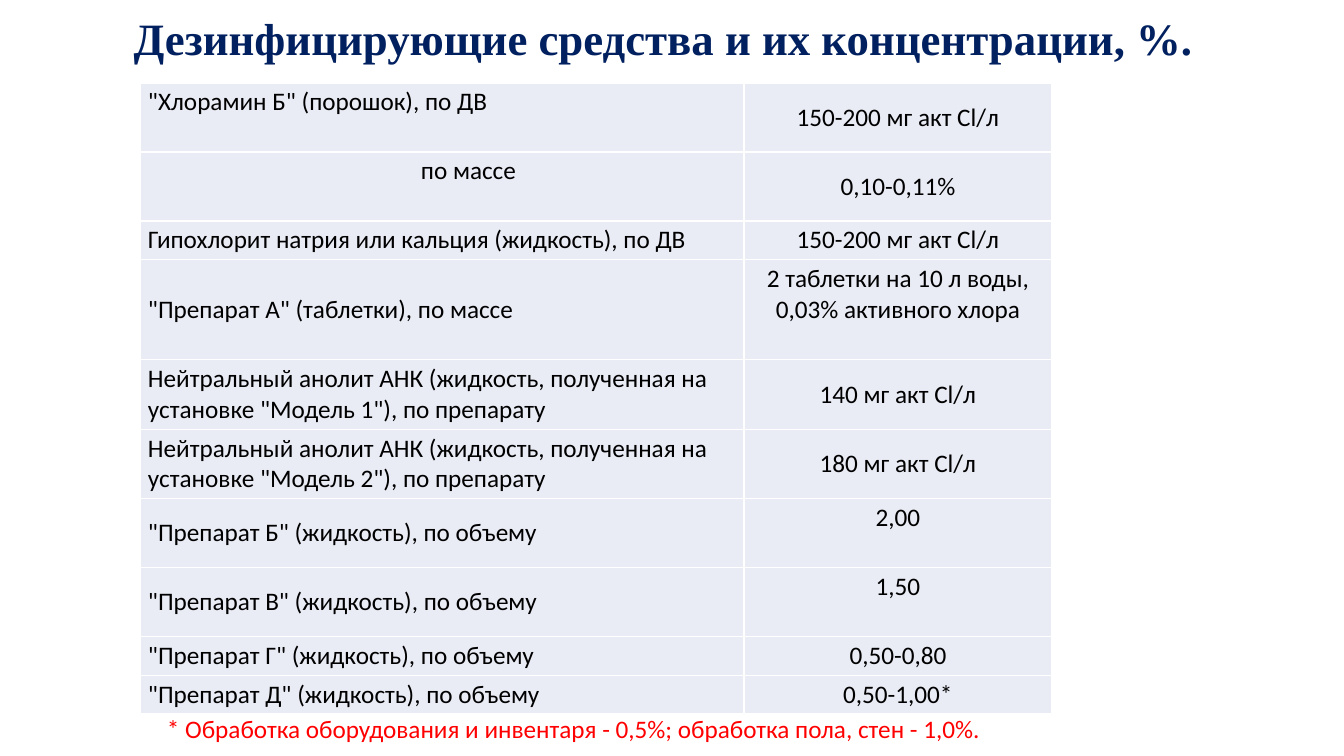
"""Build a slide with a table of disinfectants and their concentrations."""
from pptx import Presentation
from pptx.dml.color import RGBColor
from pptx.enum.text import MSO_ANCHOR, PP_ALIGN
from pptx.util import Emu, Pt

TOP, MIDDLE = MSO_ANCHOR.TOP, MSO_ANCHOR.MIDDLE
LEFT, CENTER = PP_ALIGN.LEFT, PP_ALIGN.CENTER
TITLE_ONLY = 5
COLORS = {"title": "002060", "text": "000000", "cell": "E9EBF5", "note": "FF0000"}

TITLE = "Дезинфицирующие средства и их концентрации, %."
NOTE = "* Обработка оборудования и инвентаря - 0,5%; обработка пола, стен - 1,0%."
# name, name anchor, name indent, value, value anchor, lines of height
ROWS = [
    ('"Хлорамин Б" (порошок), по ДВ', TOP, 0, "150-200 мг акт Cl/л", MIDDLE, 2),
    ("по массе", TOP, 273, "0,10-0,11%", MIDDLE, 2),
    ("Гипохлорит натрия или кальция (жидкость), по ДВ", MIDDLE, 0,
     "150-200 мг акт Cl/л", MIDDLE, 1),
    ('"Препарат А" (таблетки), по массе', MIDDLE, 0,
     "2 таблетки на 10 л воды, 0,03% активного хлора", TOP, 3),
    ('Нейтральный анолит АНК (жидкость, полученная на установке "Модель 1"), по препарату',
     MIDDLE, 0, "140 мг акт Cl/л", MIDDLE, 2),
    ('Нейтральный анолит АНК (жидкость, полученная на установке "Модель 2"), по препарату',
     MIDDLE, 0, "180 мг акт Cl/л", MIDDLE, 2),
    ('"Препарат Б" (жидкость), по объему', MIDDLE, 0, "2,00", TOP, 2),
    ('"Препарат В" (жидкость), по объему', MIDDLE, 0, "1,50", TOP, 2),
    ('"Препарат Г" (жидкость), по объему', MIDDLE, 0, "0,50-0,80", MIDDLE, 1),
    ('"Препарат Д" (жидкость), по объему', TOP, 0, "0,50-1,00*", TOP, 1),
]
COLUMN_WIDTHS = [604, 308]
LINE_HEIGHT, ROW_PADDING = 31, 7
CELL_MARGIN_X, CELL_MARGIN_Y = 8, 4


def px(length):
    return Emu(round(length * 914400 / 100.8))


def write(paragraph, text, font_name, size, color, alignment):
    paragraph.text = text
    paragraph.alignment = alignment
    paragraph.font.name = font_name
    paragraph.font.size = Pt(size)
    paragraph.font.color.rgb = RGBColor.from_string(COLORS[color])


def fill_cell(cell, text, anchor, indent, alignment):
    cell.fill.solid()
    cell.fill.fore_color.rgb = RGBColor.from_string(COLORS["cell"])
    cell.vertical_anchor = anchor
    cell.margin_left = px(CELL_MARGIN_X + indent)
    cell.margin_right = px(CELL_MARGIN_X)
    cell.margin_top = cell.margin_bottom = px(CELL_MARGIN_Y)
    write(cell.text_frame.paragraphs[0], text, "Calibri", 18, "text", alignment)


def add_title(slide):
    title = slide.shapes.title
    title.left, title.top, title.width, title.height = map(px, (84, 0, 1159, 83))
    title.text_frame.vertical_anchor = MIDDLE
    paragraph = title.text_frame.paragraphs[0]
    write(paragraph, TITLE, "Times New Roman", 32, "title", CENTER)
    paragraph.font.bold = True
    paragraph.line_spacing = 0.9


def add_concentrations(slide):
    heights = [row[-1] * LINE_HEIGHT + ROW_PADDING for row in ROWS]
    table = slide.shapes.add_table(
        len(ROWS), len(COLUMN_WIDTHS), px(140), px(83),
        px(sum(COLUMN_WIDTHS)), px(sum(heights))).table
    table.first_row = table.horz_banding = False
    for column, width in zip(table.columns, COLUMN_WIDTHS):
        column.width = px(width)
    for row, height, content in zip(table.rows, heights, ROWS):
        name, name_anchor, indent, value, value_anchor, _ = content
        row.height = px(height)
        fill_cell(row.cells[0], name, name_anchor, indent, LEFT)
        fill_cell(row.cells[1], value, value_anchor, 0, CENTER)


def add_note(slide):
    note = slide.shapes.add_textbox(*map(px, (157, 708, 844, 40)))
    note.text_frame.word_wrap = False
    write(note.text_frame.paragraphs[0], NOTE, "Calibri", 18, "note", LEFT)


def main():
    presentation = Presentation()
    presentation.slide_width, presentation.slide_height = px(1344), px(756)
    slide = presentation.slides.add_slide(presentation.slide_layouts[TITLE_ONLY])
    add_title(slide)
    add_concentrations(slide)
    add_note(slide)
    presentation.save("out.pptx")


if __name__ == "__main__":
    main()
